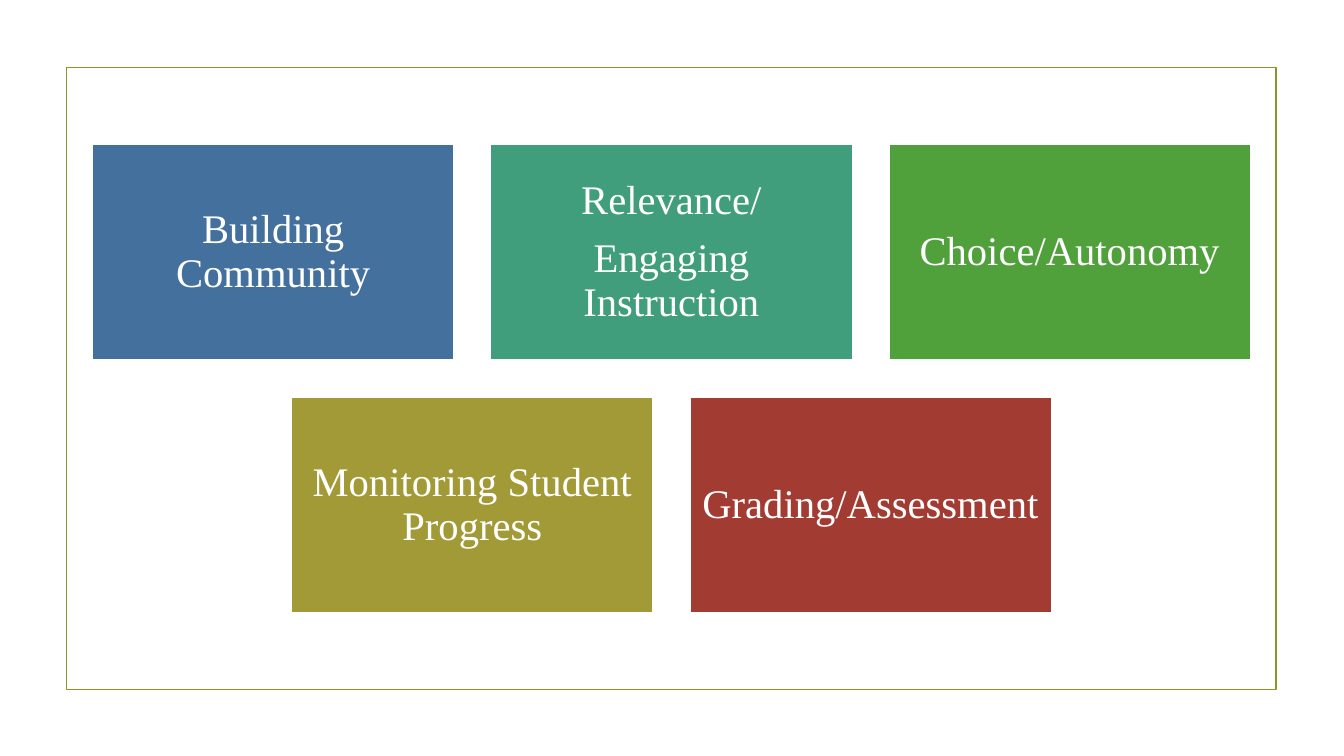
from dataclasses import dataclass

from pptx import Presentation
from pptx.dml.color import RGBColor
from pptx.enum.shapes import MSO_SHAPE
from pptx.enum.text import MSO_ANCHOR, PP_ALIGN
from pptx.util import Emu, Pt

EMU_PER_PX = 9144  # 100 px to the inch


@dataclass(frozen=True)
class Theme:
    font: str = "Times New Roman"
    card_size: int = 29
    paragraph_gap: int = 10
    line_width: float = 1.25
    white: str = "FFFFFF"
    frame: str = "83992A"
    blue: str = "44709D"
    teal: str = "409E7D"
    green: str = "50A03B"
    olive: str = "A19A37"
    red: str = "A23C33"


THEME = Theme()
SLIDE_SIZE = (1333, 750)
FRAME_BOX = (66, 67, 1200, 617)
CARD_WIDTH, CARD_HEIGHT, CARD_GAP = 359, 215, 36
CARD_PADDING = 12

TOPIC_ROWS = [
    [
        (["Building Community"], THEME.blue),
        (["Relevance/", "Engaging Instruction"], THEME.teal),
        (["Choice/Autonomy"], THEME.green),
    ],
    [
        (["Monitoring Student Progress"], THEME.olive),
        (["Grading/Assessment"], THEME.red),
    ],
]


def px(length):
    return Emu(round(length * EMU_PER_PX))


def add_rectangle(slide, box, line_color, fill_color=None):
    rectangle = slide.shapes.add_shape(MSO_SHAPE.RECTANGLE, *map(px, box))
    rectangle.shadow.inherit = False
    rectangle.line.color.rgb = RGBColor.from_string(line_color)
    rectangle.line.width = Pt(THEME.line_width)
    if fill_color:
        rectangle.fill.solid()
        rectangle.fill.fore_color.rgb = RGBColor.from_string(fill_color)
    else:
        rectangle.fill.background()
    return rectangle


def add_topic_card(slide, box, lines, color):
    label = add_rectangle(slide, box, THEME.white, color).text_frame
    label.word_wrap = True
    label.vertical_anchor = MSO_ANCHOR.MIDDLE
    label.margin_left = label.margin_right = px(CARD_PADDING)
    label.margin_top = label.margin_bottom = px(CARD_PADDING)
    label.text = "\n".join(lines)
    for paragraph in label.paragraphs:
        paragraph.alignment = PP_ALIGN.CENTER
        paragraph.line_spacing = 0.9
        paragraph.space_after = Pt(THEME.paragraph_gap)
        paragraph.font.name = THEME.font
        paragraph.font.size = Pt(THEME.card_size)
        paragraph.font.color.rgb = RGBColor.from_string(THEME.white)


def add_topic_grid(slide, box, rows):
    """Stack rows of cards, centring each row and the whole stack in the box."""
    left, top, width, height = box
    row_step = CARD_HEIGHT + CARD_GAP
    column_step = CARD_WIDTH + CARD_GAP
    first_top = top + (height - len(rows) * row_step + CARD_GAP) / 2
    for row_index, topics in enumerate(rows):
        first_left = left + (width - len(topics) * column_step + CARD_GAP) / 2
        for column, (lines, color) in enumerate(topics):
            card_box = (
                first_left + column * column_step,
                first_top + row_index * row_step,
                CARD_WIDTH,
                CARD_HEIGHT,
            )
            add_topic_card(slide, card_box, lines, color)


def main():
    presentation = Presentation()
    presentation.slide_width, presentation.slide_height = map(px, SLIDE_SIZE)
    slide = presentation.slides.add_slide(presentation.slide_layouts[6])
    add_rectangle(slide, FRAME_BOX, THEME.frame)
    add_topic_grid(slide, FRAME_BOX, TOPIC_ROWS)
    presentation.save("out.pptx")


if __name__ == "__main__":
    main()
